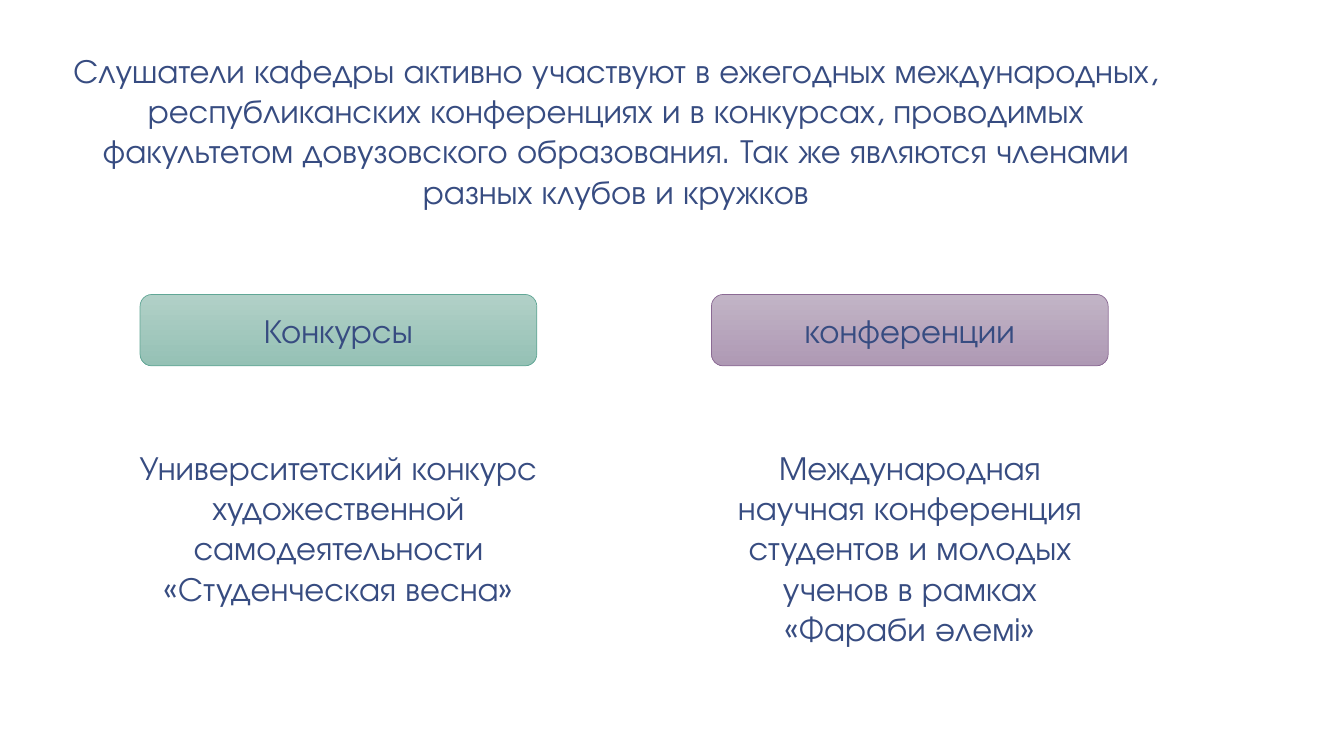
from pptx import Presentation
from pptx.dml.color import RGBColor
from pptx.enum.shapes import MSO_SHAPE
from pptx.enum.text import MSO_ANCHOR, MSO_AUTO_SIZE, PP_ALIGN
from pptx.util import Cm, Pt

NAVY = RGBColor(0x37, 0x4C, 0x81)
GREEN_LIGHT = RGBColor(0xB1, 0xD0, 0xC7)
GREEN_DARK = RGBColor(0x95, 0xC1, 0xB5)
GREEN_LINE = RGBColor(0x61, 0xA7, 0x96)
PURPLE_LIGHT = RGBColor(0xC2, 0xB4, 0xC6)
PURPLE_DARK = RGBColor(0xAE, 0x99, 0xB4)
PURPLE_LINE = RGBColor(0x8B, 0x6A, 0x94)

INTRO = (
    "Слушатели кафедры активно участвуют в ежегодных международных, "
    "республиканских конференциях и в конкурсах, проводимых факультетом "
    "довузовского образования. Так же являются членами разных клубов и кружков"
)
CONTEST = "Университетский конкурс художественной самодеятельности «Студенческая весна»"
CONFERENCE = (
    "Международная научная конференция студентов и молодых ученов "
    "в рамках «Фараби әлемі»"
)

COLUMNS = [
    ("Конкурсы", 3.53, (GREEN_LIGHT, GREEN_DARK), GREEN_LINE, CONTEST, 10.8),
    ("конференции", 17.93, (PURPLE_LIGHT, PURPLE_DARK), PURPLE_LINE, CONFERENCE, 10.39),
]
LABEL_WIDTH = 10


class SlideBuilder:
    font_name = "TeX Gyre Adventor"
    font_size = Pt(24)

    def __init__(self, presentation):
        self.slide = presentation.slides.add_slide(presentation.slide_layouts[5])

    def set_text(self, shape, text, anchor=MSO_ANCHOR.TOP):
        text_frame = shape.text_frame
        text_frame.text = text
        text_frame.word_wrap = True
        text_frame.auto_size = MSO_AUTO_SIZE.NONE
        text_frame.vertical_anchor = anchor
        paragraph = text_frame.paragraphs[0]
        paragraph.alignment = PP_ALIGN.CENTER
        font = paragraph.runs[0].font
        font.name = self.font_name
        font.size = self.font_size
        font.color.rgb = NAVY

    def title(self, text, left, top, width, height):
        title = self.slide.shapes.title
        title.left, title.top = Cm(left), Cm(top)
        title.width, title.height = Cm(width), Cm(height)
        self.set_text(title, text)

    def label(self, text, left, top, width, height, gradient, line_color):
        shape = self.slide.shapes.add_shape(
            MSO_SHAPE.ROUNDED_RECTANGLE, Cm(left), Cm(top), Cm(width), Cm(height)
        )
        shape.shadow.inherit = False
        shape.fill.gradient()
        shape.fill.gradient_angle = 270
        for stop, color in zip(shape.fill.gradient_stops, gradient):
            stop.color.rgb = color
        shape.line.color.rgb = line_color
        shape.line.width = Pt(0.5)
        self.set_text(shape, text, MSO_ANCHOR.MIDDLE)

    def text(self, text, left, top, width, height):
        box = self.slide.shapes.add_textbox(Cm(left), Cm(top), Cm(width), Cm(height))
        self.set_text(box, text)


def main():
    presentation = Presentation()
    presentation.slide_width = Cm(33.87)
    presentation.slide_height = Cm(19.05)
    builder = SlideBuilder(presentation)
    builder.title(INTRO, 1.12, 1.12, 28.8, 4.37)
    for label, left, gradient, line_color, description, width in COLUMNS:
        builder.label(label, left, 7.42, LABEL_WIDTH, 1.8, gradient, line_color)
        centered_left = left + (LABEL_WIDTH - width) / 2
        builder.text(description, centered_left, 11.13, width, 5.38)
    presentation.save("out.pptx")


if __name__ == "__main__":
    main()
